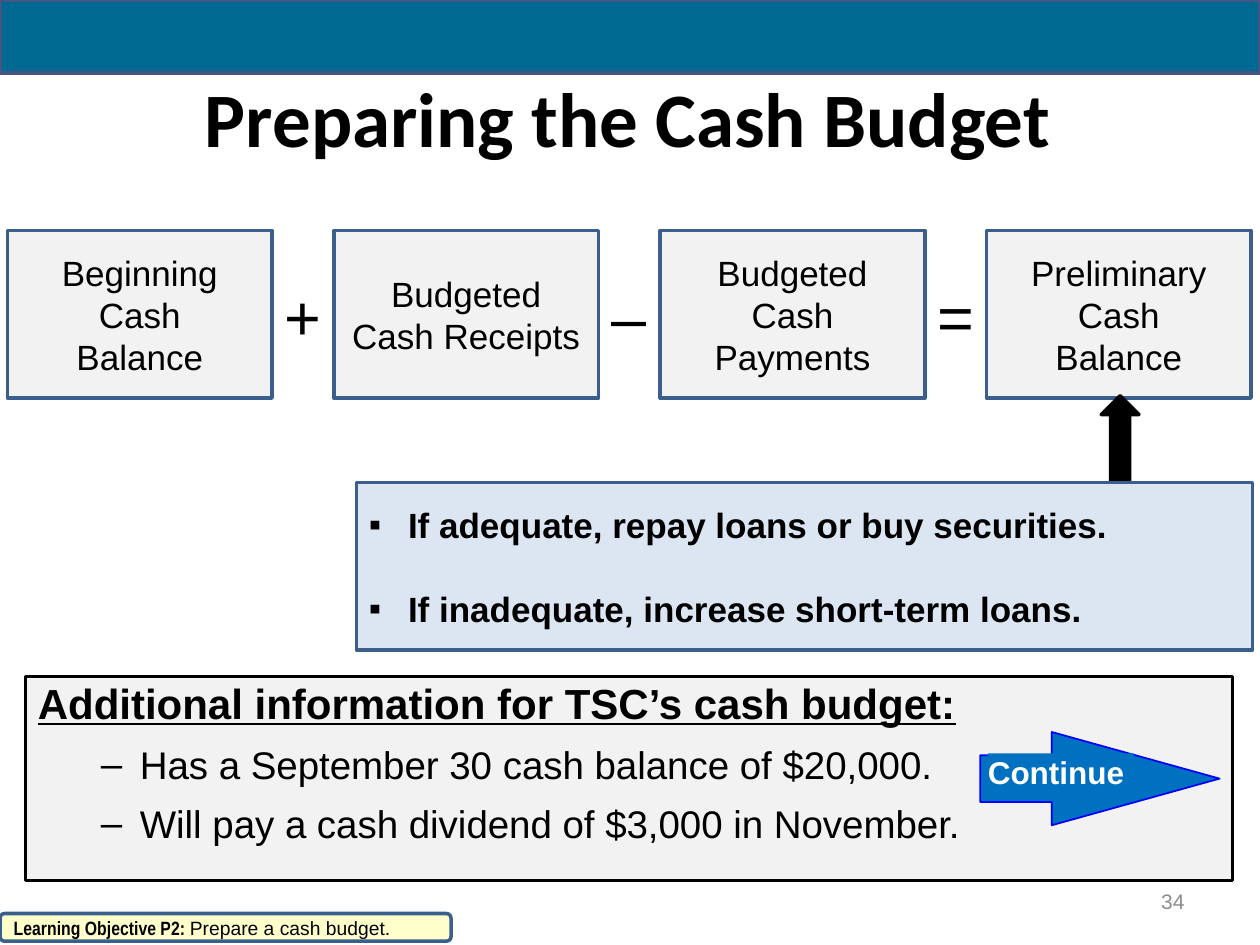
from lxml.etree import SubElement
from pptx import Presentation
from pptx.dml.color import RGBColor
from pptx.enum.shapes import MSO_SHAPE
from pptx.enum.text import MSO_ANCHOR, MSO_AUTO_SIZE, PP_ALIGN
from pptx.oxml.ns import qn
from pptx.util import Inches, Pt

COLORS = {
    "band": "006991",
    "band_line": "445583",
    "panel": "F2F2F2",
    "steel": "3A5F8C",
    "black": "000000",
    "arrow": "0070C0",
    "arrow_line": "0000FF",
    "white": "FFFFFF",
    "advice": "DCE6F2",
    "page_number": "8C8C8C",
    "objective": "FFFFCC",
}
TERMS = [
    "Beginning\vCash\vBalance",
    "Budgeted\vCash Receipts",
    "Budgeted\vCash Payments",
    "Preliminary\vCash\vBalance",
]
OPERATORS = ["+", "–", "="]
ADVICE = [
    "If adequate, repay loans or buy securities.",
    "If inadequate, increase short-term loans.",
]
FACTS = [
    "Has a September 30 cash balance of $20,000.",
    "Will pay a cash dividend of $3,000 in November.",
]
TERM_LEFT, TERM_WIDTH, TERM_PITCH = 0.06, 2.1, 2.59


def color(name):
    return RGBColor.from_string(COLORS[name])


def apply(target, values):
    for name, value in values.items():
        setattr(target, name, value)


def format_runs(para, size, tint="black", **values):
    for span in para.runs:
        apply(span.font, {"name": "Arial", "size": Pt(size), **values})
        span.font.color.rgb = color(tint)


def place(shape, left, top, width, height):
    apply(shape, {
        "left": Inches(left), "top": Inches(top),
        "width": Inches(width), "height": Inches(height),
    })


def paint(shape, fill, line=None, weight=2):
    shape.fill.solid()
    shape.fill.fore_color.rgb = color(fill)
    if line:
        shape.line.color.rgb = color(line)
        shape.line.width = Pt(weight)
    else:
        shape.line.fill.background()


def add_block(shapes, kind, frame, fill, line=None, weight=2):
    block = shapes.add_shape(kind, *map(Inches, frame))
    block.shadow.inherit = False
    paint(block, fill, line, weight)
    apply(block.text_frame, {"word_wrap": True, "vertical_anchor": MSO_ANCHOR.MIDDLE})
    block.text_frame.paragraphs[0].alignment = PP_ALIGN.LEFT
    return block


def add_label(page, frame, text, size, tint, align, wrap):
    box = page.shapes.add_textbox(*map(Inches, frame))
    apply(box.text_frame, {"word_wrap": wrap, "vertical_anchor": MSO_ANCHOR.MIDDLE})
    para = box.text_frame.paragraphs[0]
    apply(para, {"text": text, "alignment": align})
    format_runs(para, size, tint)


def set_bullet(para, symbol=None, margin=0, hanging=0):
    properties = para._p.get_or_add_pPr()
    properties.set("marL", str(Inches(margin)))
    properties.set("indent", str(-Inches(hanging)))
    if symbol:
        SubElement(properties, qn("a:buFont"), typeface="Arial")
        SubElement(properties, qn("a:buChar"), char=symbol)
    else:
        SubElement(properties, qn("a:buNone"))


def fill_title(page):
    title = page.shapes.title
    place(title, 0.4, 0.3, 9.17, 1.25)
    title.text_frame.vertical_anchor = MSO_ANCHOR.MIDDLE
    para = title.text_frame.paragraphs[0]
    apply(para, {"text": "Preparing the Cash Budget", "alignment": PP_ALIGN.CENTER})
    format_runs(para, 44, name="Calibri", bold=True)


def fill_information(page):
    body = page.placeholders[1]
    place(body, 0.2, 5.37, 9.58, 1.62)
    paint(body, "panel", "black", 1.5)
    frame = body.text_frame
    apply(frame, {"auto_size": MSO_AUTO_SIZE.NONE, "vertical_anchor": MSO_ANCHOR.TOP})
    heading = frame.paragraphs[0]
    apply(heading, {
        "text": "Additional information for TSC’s cash budget:",
        "line_spacing": 0.9, "space_before": Pt(0),
    })
    set_bullet(heading, margin=0.38, hanging=0.38)
    format_runs(heading, 24, bold=True, underline=True)
    for fact in FACTS:
        para = frame.add_paragraph()
        apply(para, {"text": fact, "level": 1, "line_spacing": 0.9, "space_before": Pt(10)})
        set_bullet(para, "–", 0.81, 0.31)
        format_runs(para, 22, bold=False)


def add_continue(page):
    group = page.shapes.add_group_shape()
    arrow = add_block(group.shapes, MSO_SHAPE.RIGHT_ARROW,
                      (7.78, 5.81, 1.9, 0.74), "arrow", "arrow_line", 1)
    arrow.adjustments[1] = 1.8
    label = add_block(group.shapes, MSO_SHAPE.RECTANGLE, (7.84, 5.98, 1.16, 0.3), "arrow")
    apply(label.text_frame, dict.fromkeys(
        ("margin_left", "margin_top", "margin_right", "margin_bottom"), 0))
    para = label.text_frame.paragraphs[0]
    para.text = "Continue"
    format_runs(para, 18, "white", bold=True)


def add_equation(page):
    for index, term in enumerate(TERMS):
        left = TERM_LEFT + index * TERM_PITCH
        box = add_block(page.shapes, MSO_SHAPE.RECTANGLE,
                        (left, 1.83, TERM_WIDTH, 1.33), "panel", "steel")
        para = box.text_frame.paragraphs[0]
        apply(para, {"text": term, "alignment": PP_ALIGN.CENTER})
        format_runs(para, 20)
    for index, operator in enumerate(OPERATORS):
        left = TERM_LEFT + TERM_WIDTH + index * TERM_PITCH
        add_label(page, (left, 2.15, TERM_PITCH - TERM_WIDTH, 0.71),
                  operator, 36, "black", PP_ALIGN.CENTER, False)


def add_advice(page):
    arrow = add_block(page.shapes, MSO_SHAPE.RIGHT_ARROW,
                      (8.34, 3.54, 1.1, 0.3), "black", "black")
    arrow.rotation = 270
    box = add_block(page.shapes, MSO_SHAPE.RECTANGLE,
                    (2.83, 3.83, 7.11, 1.33), "advice", "steel")
    frame = box.text_frame
    for index, advice in enumerate(ADVICE):
        para = frame.add_paragraph() if index else frame.paragraphs[0]
        apply(para, {
            "text": advice, "alignment": PP_ALIGN.LEFT,
            "space_before": Pt(24 if index else 0),
        })
        set_bullet(para, "▪", 0.31, 0.31)
        format_runs(para, 20, bold=True)


def add_objective(page):
    box = add_block(page.shapes, MSO_SHAPE.ROUNDED_RECTANGLE,
                    (0, 7.25, 3.58, 0.22), "objective", "steel")
    para = box.text_frame.paragraphs[0]
    for text in ("Learning Objective P2: ", "Prepare a cash budget."):
        para.add_run().text = text
    format_runs(para, 11)
    apply(para.runs[0].font, {"name": "Arial Narrow", "bold": True})


def main():
    deck = Presentation()
    apply(deck, {"slide_width": Inches(10), "slide_height": Inches(7.5)})
    page = deck.slides.add_slide(deck.slide_layouts[1])
    add_block(page.shapes, MSO_SHAPE.RECTANGLE, (0, 0, 10, 0.58), "band", "band_line", 2.25)
    fill_title(page)
    fill_information(page)
    add_continue(page)
    add_equation(page)
    add_advice(page)
    add_label(page, (7.17, 6.95, 2.33, 0.4), "34", 12, "page_number", PP_ALIGN.RIGHT, True)
    add_objective(page)
    deck.save("out.pptx")


if __name__ == "__main__":
    main()
